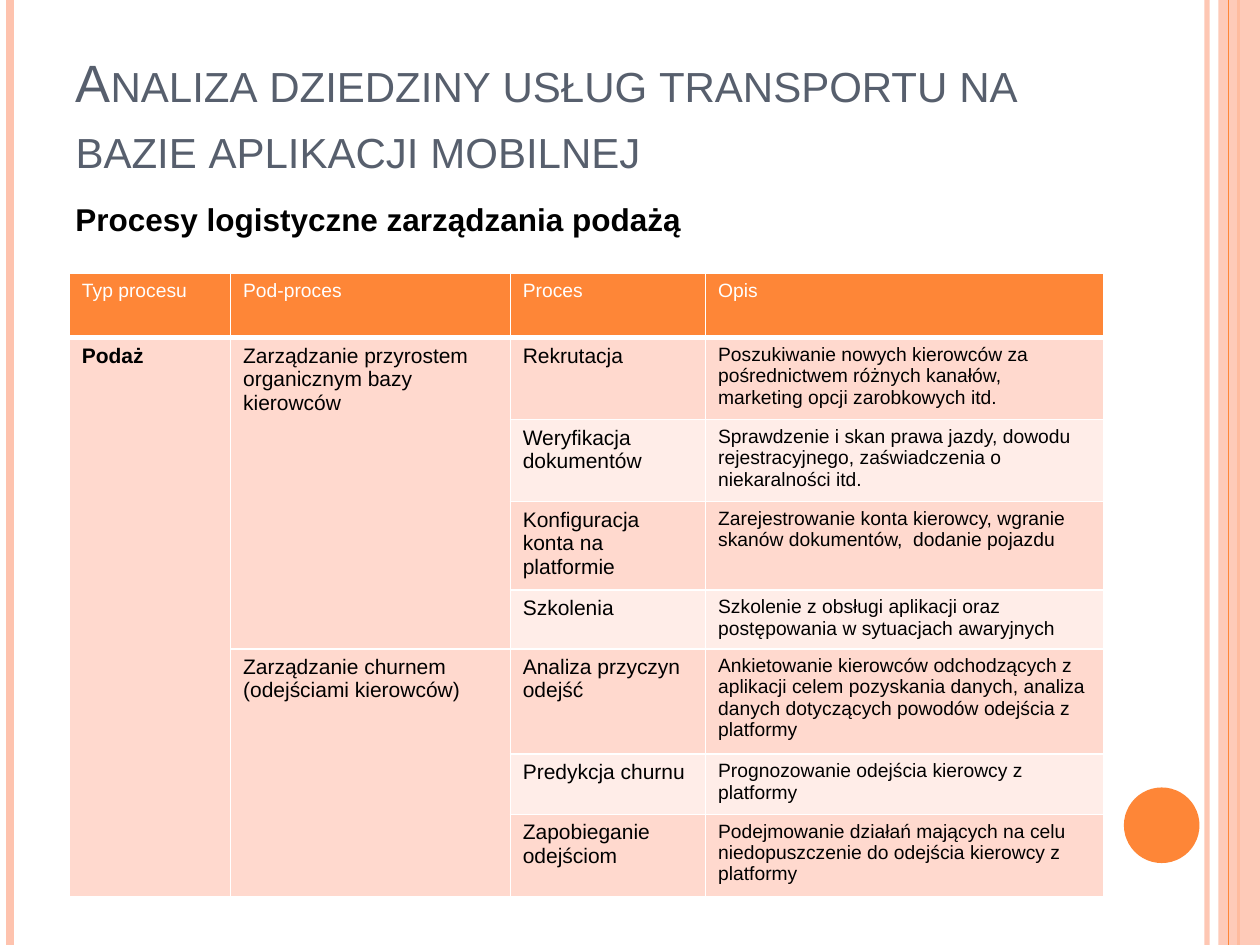
from lxml.etree import SubElement as Sub
from pptx import Presentation
from pptx.dml.color import RGBColor
from pptx.enum.shapes import MSO_CONNECTOR as Conn, MSO_SHAPE as Shape
from pptx.enum.text import MSO_ANCHOR as Anchor, PP_ALIGN as Align
from pptx.oxml.ns import qn
from pptx.util import Inches, Pt

ORANGE = RGBColor(0xFE, 0x86, 0x37)
PEACH = RGBColor(0xFE, 0xC3, 0xAE)
BAND = RGBColor(0xFF, 0xD9, 0xCE)
PALE = RGBColor(0xFF, 0xED, 0xE8)
SLATE = RGBColor(0x57, 0x5F, 0x6D)
WHITE = RGBColor(0xFF, 0xFF, 0xFF)
BLACK = RGBColor(0, 0, 0)

COLS = [1.28, 2.22, 1.55, 3.16]
ROWS = [0.51, 0.59, 0.59, 0.67, 0.42, 0.76, 0.48, 0.59]
HEAD = ["Typ procesu", "Pod-proces", "Proces", "Opis"]
GROUPS = [
    ("Zarządzanie przyrostem organicznym bazy kierowców", [
        ("Rekrutacja", "Poszukiwanie nowych kierowców za pośrednictwem "
         "różnych kanałów, marketing opcji zarobkowych itd."),
        ("Weryfikacja dokumentów", "Sprawdzenie i skan prawa jazdy, dowodu "
         "rejestracyjnego, zaświadczenia o niekaralności itd."),
        ("Konfiguracja konta na platformie", "Zarejestrowanie konta kierowcy, "
         "wgranie skanów dokumentów,  dodanie pojazdu"),
        ("Szkolenia", "Szkolenie z obsługi aplikacji oraz postępowania "
         "w sytuacjach awaryjnych"),
    ]),
    ("Zarządzanie churnem (odejściami kierowców)", [
        ("Analiza przyczyn odejść", "Ankietowanie kierowców odchodzących "
         "z aplikacji celem pozyskania danych, analiza danych dotyczących "
         "powodów odejścia z platformy"),
        ("Predykcja churnu", "Prognozowanie odejścia kierowcy z platformy"),
        ("Zapobieganie odejściom", "Podejmowanie działań mających na celu "
         "niedopuszczenie do odejścia kierowcy z platformy"),
    ]),
]


def write(frame, text, size=12, color=BLACK, bold=False, caps=False, gap=None):
    frame.word_wrap = True
    para = frame.paragraphs[0]
    para.alignment = Align.LEFT
    if gap:
        para.line_spacing = gap
    run = para.add_run()
    run.text = text
    font = run.font
    font.name, font.size, font.bold = "Arial", Pt(size), bold
    font.color.rgb = color
    if caps:
        font._element.set("cap", "small")


def fade(part, percent):
    """Make the solid fill inside a part partly see-through."""
    tint = next(part.iter(qn("a:srgbClr")))
    Sub(tint, qn("a:alpha"), val=str(percent * 1000))


def stripe(slide, x, width, color, alpha=100):
    line = slide.shapes.add_connector(
        Conn.STRAIGHT, Inches(x), 0, Inches(x), Inches(7.5))
    line.line.color.rgb = color
    line.line.width = Pt(width)
    if alpha < 100:
        fade(line._element.spPr, alpha)
    Sub(line._element.spPr, qn("a:effectLst"))


def block(slide, kind, box, color, alpha=100):
    shape = slide.shapes.add_shape(kind, *map(Inches, box))
    shape.shadow.inherit = False
    shape.fill.solid()
    shape.fill.fore_color.rgb = color
    shape.line.fill.background()
    if alpha < 100:
        fade(shape._element.spPr, alpha)


def style(cell, color, base=1):
    """Give a cell white borders, then its fill."""
    props = cell._tc.get_or_add_tcPr()
    for side, width in zip("LRTB", (1, 1, 1, base)):
        edge = Sub(props, qn(f"a:ln{side}"), w=str(Pt(width)))
        Sub(Sub(edge, qn("a:solidFill")), qn("a:srgbClr"), val=str(WHITE))
    cell.fill.solid()
    cell.fill.fore_color.rgb = color


def decorate(slide):
    stripe(slide, 9.58, 3, PEACH, 93)
    stripe(slide, 0.08, 4.5, PEACH)
    stripe(slide, 9.83, 1.5, ORANGE)
    block(slide, Shape.RECTANGLE, (9.67, 0, 0.33, 7.5), PEACH, 87)
    stripe(slide, 9.75, 0.75, ORANGE)
    block(slide, Shape.OVAL, (8.92, 6.25, 0.6, 0.6), ORANGE)


def headings(slide):
    title = slide.shapes.title
    title.left, title.top = Inches(0.5), Inches(0.3)
    title.width, title.height = Inches(8.17), Inches(1.25)
    frame = title.text_frame
    frame.vertical_anchor = Anchor.TOP
    frame.margin_top = Inches(0.07)
    write(frame, "Analiza dziedziny usług transportu na bazie aplikacji "
          "mobilnej", size=30, color=SLATE, caps=True, gap=1.05)
    box = slide.shapes.add_textbox(*map(Inches, (0.5, 1.5, 8.95, 0.6)))
    write(box.text_frame, "Procesy logistyczne zarządzania podażą",
          size=18, bold=True, gap=1.14)


def grid(slide):
    table = slide.shapes.add_table(
        len(ROWS), len(COLS), Inches(0.55), Inches(2.17),
        Inches(sum(COLS)), Inches(sum(ROWS))).table
    for col, width in zip(table.columns, COLS):
        col.width = Inches(width)
    for row, height in zip(table.rows, ROWS):
        row.height = Inches(height)

    # Header and banded fills
    for i in range(len(ROWS)):
        for j in range(len(COLS)):
            if i == 0:
                style(table.cell(i, j), ORANGE, base=3)
            else:
                style(table.cell(i, j), BAND if j < 2 or i % 2 else PALE)
    for j, text in enumerate(HEAD):
        write(table.cell(0, j).text_frame, text, size=11, color=WHITE)

    # Process type spans every row, each sub-process spans its group
    kind = table.cell(1, 0)
    kind.merge(table.cell(len(ROWS) - 1, 0))
    write(kind.text_frame, "Podaż", bold=True)
    top = 1
    for name, steps in GROUPS:
        group = table.cell(top, 1)
        group.merge(table.cell(top + len(steps) - 1, 1))
        write(group.text_frame, name)
        for i, (step, note) in enumerate(steps, top):
            write(table.cell(i, 2).text_frame, step)
            write(table.cell(i, 3).text_frame, note, size=11)
        top += len(steps)


def main():
    deck = Presentation()
    deck.slide_width, deck.slide_height = Inches(10), Inches(7.5)
    slide = deck.slides.add_slide(deck.slide_layouts[5])
    decorate(slide)
    headings(slide)
    grid(slide)
    deck.save("out.pptx")


if __name__ == "__main__":
    main()
